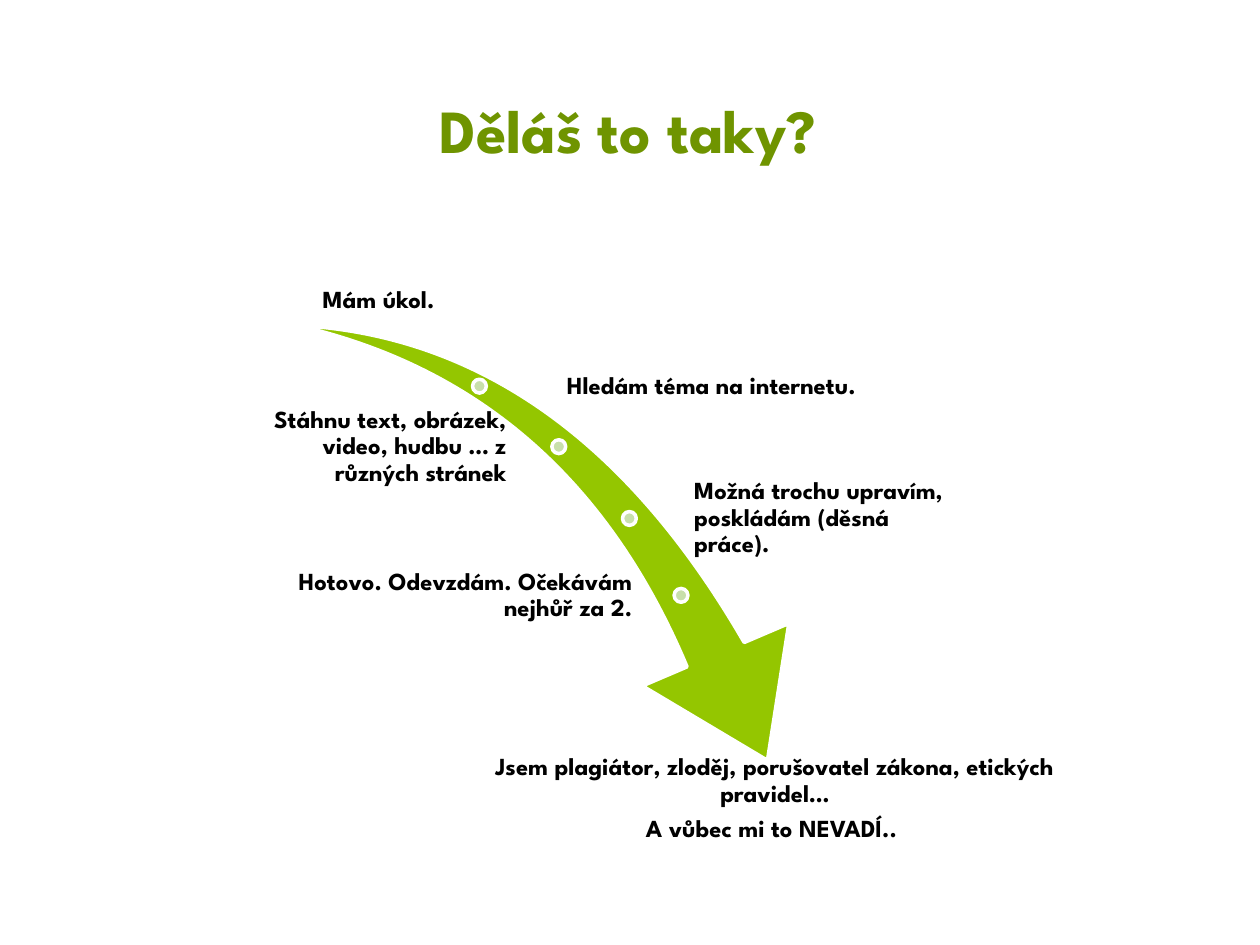
from pptx import Presentation
from pptx.dml.color import RGBColor
from pptx.enum.shapes import MSO_SHAPE as Shape
from pptx.enum.text import MSO_ANCHOR as Anchor, PP_ALIGN as Align
from pptx.util import Pt

PX = 9144
FONT = "League Spartan"
WHITE = RGBColor(0xFF, 0xFF, 0xFF)
BLACK = RGBColor(0x00, 0x00, 0x00)
LIME = RGBColor(0x94, 0xC6, 0x00)
OLIVE = RGBColor(0x6F, 0x94, 0x00)
PALE_GREEN = RGBColor(0xC8, 0xDF, 0xAB)

TITLE_BOX = (47, 45, 903, 114)
DESCENT_BOX = (197, 170)
DOT_SIZE = 11
STEP_HEIGHT = 81
STOPS = [(178, 131), (241, 179), (297, 236), (338, 297)]
STEPS = [
    (0, 0, 207, Align.CENTER, Anchor.BOTTOM, ["Mám úkol."]),
    (251, 96, 307, Align.LEFT, Anchor.MIDDLE, ["Hledám téma na internetu."]),
    (0, 144, 207, Align.RIGHT, Anchor.MIDDLE,
     ["Stáhnu text, obrázek, video, hudbu … z různých stránek"]),
    (352, 201, 207, Align.LEFT, Anchor.MIDDLE,
     ["Možná trochu upravím, poskládám (děsná práce)."]),
    (0, 262, 307, Align.RIGHT, Anchor.MIDDLE,
     ["Hotovo. Odevzdám. Očekávám nejhůř za 2."]),
    (189, 427, 458, Align.CENTER, Anchor.TOP,
     ["Jsem plagiátor, zloděj, porušovatel zákona, etických pravidel…",
      "A vůbec mi to NEVADÍ.. "]),
]


def emu(*lengths):
    """Turn px lengths into EMU."""
    return [length * PX for length in lengths]


def add_words(paragraph, words, size, color):
    """Add one bold run to a paragraph."""
    run = paragraph.add_run()
    run.text = words
    run.font.name = FONT
    run.font.size = Pt(size)
    run.font.bold = True
    run.font.color.rgb = color


def place_title(title, box):
    """Move the title placeholder into its box and write it."""
    title.left, title.top, title.width, title.height = emu(*box)
    title.text_frame.vertical_anchor = Anchor.MIDDLE
    heading = title.text_frame.paragraphs[0]
    heading.alignment = Align.CENTER
    add_words(heading, "Děláš to taky?", 35, OLIVE)


def add_outlined(shapes, preset, box, color):
    """Add a flat shape with a white outline."""
    outlined = shapes.add_shape(preset, *emu(*box))
    outlined.shadow.inherit = False
    outlined.fill.solid()
    outlined.fill.fore_color.rgb = color
    outlined.line.color.rgb = WHITE
    outlined.line.width = Pt(2)
    return outlined


def add_step(shapes, box, align, anchor, sentences):
    """Add the text of one step beside the arrow."""
    frame = shapes.add_textbox(*emu(*box)).text_frame
    frame.word_wrap = True
    frame.vertical_anchor = anchor
    inset, = emu(2)
    frame.margin_left = frame.margin_right = inset
    frame.margin_top = frame.margin_bottom = inset
    for index, sentence in enumerate(sentences):
        paragraph = frame.add_paragraph() if index else frame.paragraphs[0]
        paragraph.alignment = align
        paragraph.line_spacing = 0.9
        paragraph.space_after = Pt(5)
        add_words(paragraph, sentence, 14, BLACK)


def add_descent(shapes, box):
    """Draw the falling arrow with its stops and steps from the box corner."""
    left, top = box
    arrow = add_outlined(shapes, Shape.SWOOSH_ARROW,
                         (left + 29, top + 101, 438, 306), LIME)
    arrow.rotation = 73.3
    arrow.adjustments[0] = 0.16
    arrow.adjustments[1] = 0.31
    for x, y in STOPS:
        add_outlined(shapes, Shape.OVAL,
                     (left + x, top + y, DOT_SIZE, DOT_SIZE), PALE_GREEN)
    for x, y, width, align, anchor, sentences in STEPS:
        add_step(shapes, (left + x, top + y, width, STEP_HEIGHT),
                 align, anchor, sentences)


def main():
    """Build and save the slide."""
    deck = Presentation()
    deck.slide_width, deck.slide_height = emu(1000, 750)
    slide = deck.slides.add_slide(deck.slide_layouts[5])
    place_title(slide.shapes.title, TITLE_BOX)
    add_descent(slide.shapes.add_group_shape().shapes, DESCENT_BOX)
    deck.save("out.pptx")


if __name__ == "__main__":
    main()
